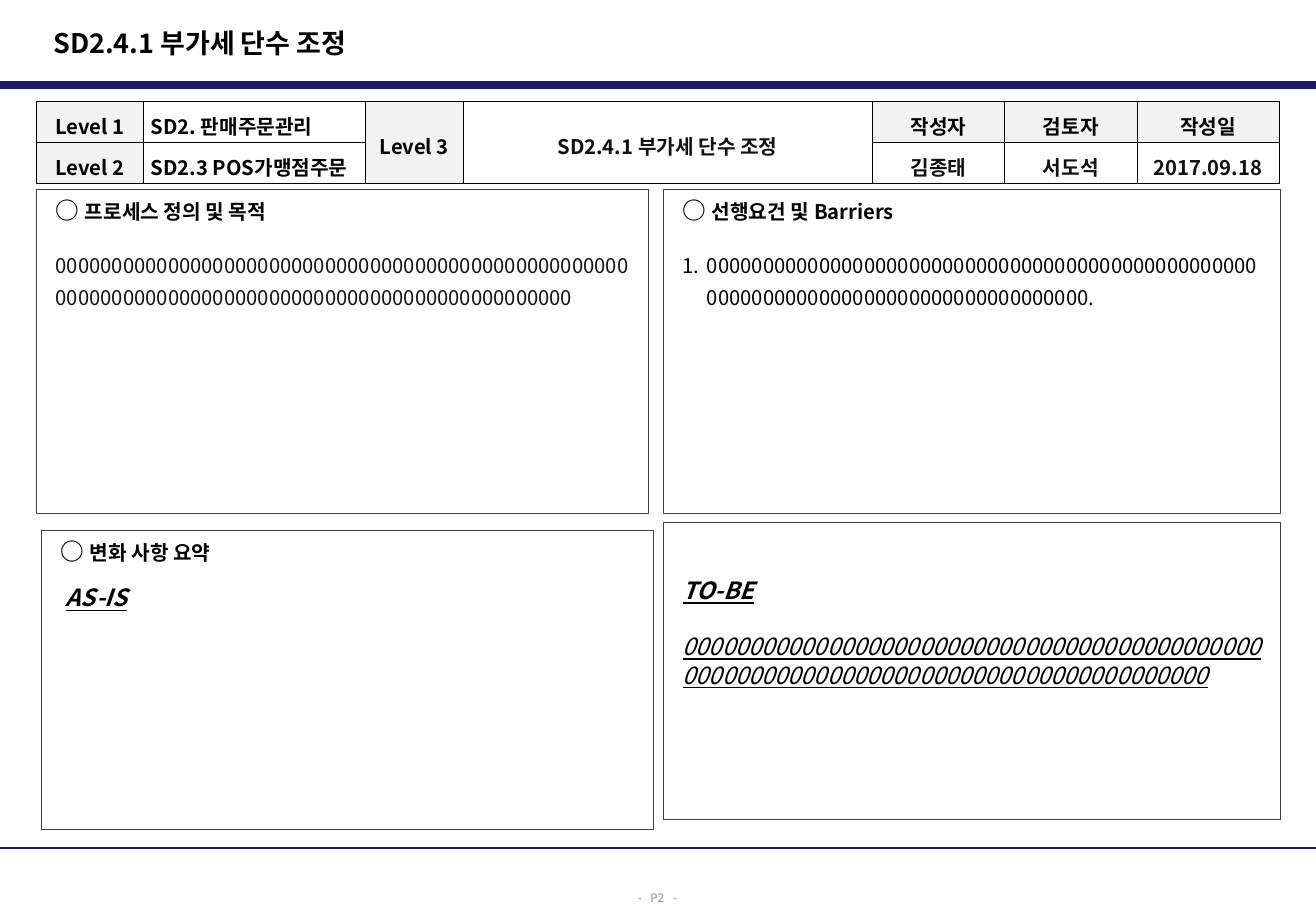
from lxml import etree
from pptx import Presentation
from pptx.dml.color import RGBColor
from pptx.enum import shapes, text
from pptx.oxml import ns
from pptx.util import Pt

# Content
TITLE = "SD2.4.1 부가세 단수 조정"
PAGE_MARK = "- P2 -"
HEADER_ROWS = [
    ["Level 1", "SD2. 판매주문관리", "Level 3", TITLE, "작성자", "검토자", "작성일"],
    ["Level 2", "SD2.3 POS가맹점주문", "", "", "김종태", "서도석", "2017.09.18"],
]
LABEL_CELLS = {(0, 0), (1, 0), (0, 2), (0, 4), (0, 5), (0, 6)}
MERGED_COLUMNS = (2, 3)
CIRCLE = "○ "
# Each panel: box, top inset, paragraphs of (role, space before, runs)
PANELS = [
    ((21.6, 112.3, 362.9, 192.2), 3.6, [
        ("heading", 0, [CIRCLE, "프로세스 정의 및 목적"]),
        ("body", 12.4, ["0" * 97])]),
    ((393.1, 112.3, 365.8, 192.2), 3.6, [
        ("heading", 0, [CIRCLE, "선행요건 및 Barriers"]),
        ("numbered", 12.4, ["0" * 83 + "."])]),
    ((24.5, 314.6, 362.9, 177.1), 3.6, [
        ("heading", 0, [CIRCLE, "변화 사항 요약"]),
        ("as_is", 10, ["AS-IS"])]),
    ((393.1, 309.6, 365.8, 176.4), 31.3, [
        ("state", 0, ["TO-BE"]),
        ("state_text", 16.1, ["0" * 84])]),
]

# Theme
THEME = {
    "font": "Noto Sans CJK KR", "mono": "DejaVu Sans Mono",
    "navy": "191966", "ink": "000000", "soft_ink": "111111",
    "label_fill": "F2F2F2", "frame": "404040", "muted": "969696",
    "title": 16, "large": 14, "normal": 12, "small": 7,
}
ROLES = {  # size, bold, emphasis, line height, left indent, colour
    "heading": ("normal", True, False, 17.1, 0, "ink"),
    "body": ("normal", False, False, 19, 0, "soft_ink"),
    "numbered": ("normal", False, False, 19, 14.4, "ink"),
    "as_is": ("large", True, True, 17.1, 3, "ink"),
    "state": ("large", True, True, 17.1, 0, "ink"),
    "state_text": ("large", False, True, 17.1, 0, "ink"),
}
SLIDE_W, SLIDE_H = 780, 540
TABLE_LEFT, TABLE_TOP, ROW_H = 21.6, 60, 24.3
COLUMN_WIDTHS = [63.4, 131.8, 57.6, 242.6, 78.5, 78.5, 84.2]


def color(name):
    return RGBColor.from_string(THEME[name])


def style_run(run, size, ink="ink", bold=False, emphasis=False, face="font"):
    font = run.font
    font.size, font.bold, font.name = Pt(THEME[size]), bold, THEME[face]
    font.color.rgb = color(ink)
    if emphasis:
        font.italic = font.underline = True
    east_asian = etree.SubElement(run._r.get_or_add_rPr(), ns.qn("a:ea"))
    east_asian.set("typeface", THEME[face])


def set_margins(target, left, top, right, bottom):
    target.margin_left, target.margin_top = Pt(left), Pt(top)
    target.margin_right, target.margin_bottom = Pt(right), Pt(bottom)


def add_label(slide, box, words, wrap):
    frame = slide.shapes.add_textbox(*map(Pt, box)).text_frame
    frame.word_wrap = wrap
    frame.text = words
    return frame


def add_rule(slide, y, weight):
    rule = slide.shapes.add_connector(
        shapes.MSO_CONNECTOR.STRAIGHT, 0, Pt(y), Pt(SLIDE_W), Pt(y))
    rule.line.color.rgb = color("navy")
    rule.line.width = Pt(weight)
    etree.SubElement(rule._element.spPr, ns.qn("a:effectLst"))


def add_borders(cell):
    properties = cell._tc.get_or_add_tcPr()
    for side in ("a:lnL", "a:lnR", "a:lnT", "a:lnB"):
        edge = etree.SubElement(properties, ns.qn(side), w=str(int(Pt(0.5))))
        fill = etree.SubElement(edge, ns.qn("a:solidFill"))
        etree.SubElement(fill, ns.qn("a:srgbClr"), val=THEME["ink"])


def add_header_table(slide):
    table = slide.shapes.add_table(
        len(HEADER_ROWS), len(COLUMN_WIDTHS), Pt(TABLE_LEFT), Pt(TABLE_TOP),
        Pt(sum(COLUMN_WIDTHS)), Pt(ROW_H * len(HEADER_ROWS))).table
    table.first_row = table.horz_banding = False
    for column, width in zip(table.columns, COLUMN_WIDTHS):
        column.width = Pt(width)
    for row in table.rows:
        row.height = Pt(ROW_H)
    for c in MERGED_COLUMNS:
        table.cell(0, c).merge(table.cell(1, c))
    for r, row in enumerate(HEADER_ROWS):
        for c, words in enumerate(row):
            cell = table.cell(r, c)
            is_label = (r, c) in LABEL_CELLS
            add_borders(cell)
            if is_label:
                cell.fill.solid()
                cell.fill.fore_color.rgb = color("label_fill")
            else:
                cell.fill.background()
            set_margins(cell, 4.3, 0.7, 4.3, 0.7)
            cell.vertical_anchor = text.MSO_ANCHOR.MIDDLE
            if not words:
                continue
            cell.text = words
            paragraph = cell.text_frame.paragraphs[0]
            paragraph.alignment = text.PP_ALIGN.LEFT if c == 1 else text.PP_ALIGN.CENTER
            paragraph.line_spacing = Pt(22)
            ink = "ink" if is_label or c == 1 else "soft_ink"
            style_run(paragraph.runs[0], "normal", ink, bold=True)


def add_panel(slide, box, top_inset, paragraphs):
    panel = slide.shapes.add_shape(shapes.MSO_SHAPE.RECTANGLE, *map(Pt, box))
    panel.shadow.inherit = False
    panel.fill.background()
    panel.line.color.rgb = color("frame")
    panel.line.width = Pt(0.5)
    frame = panel.text_frame
    frame.word_wrap = True
    frame.vertical_anchor = text.MSO_ANCHOR.TOP
    set_margins(frame, 11.5, top_inset, 7.2, 3.6)
    for i, (role, before, pieces) in enumerate(paragraphs):
        size, bold, emphasis, line_height, indent, ink = ROLES[role]
        paragraph = frame.add_paragraph() if i else frame.paragraphs[0]
        paragraph.alignment = text.PP_ALIGN.LEFT
        paragraph.line_spacing = Pt(line_height)
        if before:
            paragraph.space_before = Pt(before)
        properties = paragraph._p.get_or_add_pPr()
        if indent:
            properties.set("marL", str(int(Pt(indent))))
        if role == "numbered":
            properties.set("indent", str(-int(Pt(indent))))
            etree.SubElement(properties, ns.qn("a:buFont"), typeface="+mj-lt")
            etree.SubElement(properties, ns.qn("a:buAutoNum"), type="arabicPeriod")
        for piece in pieces:
            run = paragraph.add_run()
            run.text = piece
            style_run(run, "large" if piece == CIRCLE else size, ink, bold, emphasis)


def main():
    deck = Presentation()
    deck.slide_width, deck.slide_height = Pt(SLIDE_W), Pt(SLIDE_H)
    slide = deck.slides.add_slide(deck.slide_layouts[6])

    # Rules and page mark
    add_rule(slide, 50.4, 4.5)
    add_rule(slide, 502.6, 1.5)
    page = add_label(slide, (370.1, 522, 40.3, 18), PAGE_MARK, False).paragraphs[0]
    page.line_spacing = 1.3
    style_run(page.runs[0], "small", "muted", face="mono")

    # Panels
    for box, top_inset, paragraphs in PANELS:
        add_panel(slide, box, top_inset, paragraphs)

    # Title and header table
    title = add_label(slide, (24.5, 11.5, 511.9, 27.4), TITLE, True)
    title.vertical_anchor = text.MSO_ANCHOR.MIDDLE
    style_run(title.paragraphs[0].runs[0], "title", bold=True)
    add_header_table(slide)

    deck.save("out.pptx")


if __name__ == "__main__":
    main()
